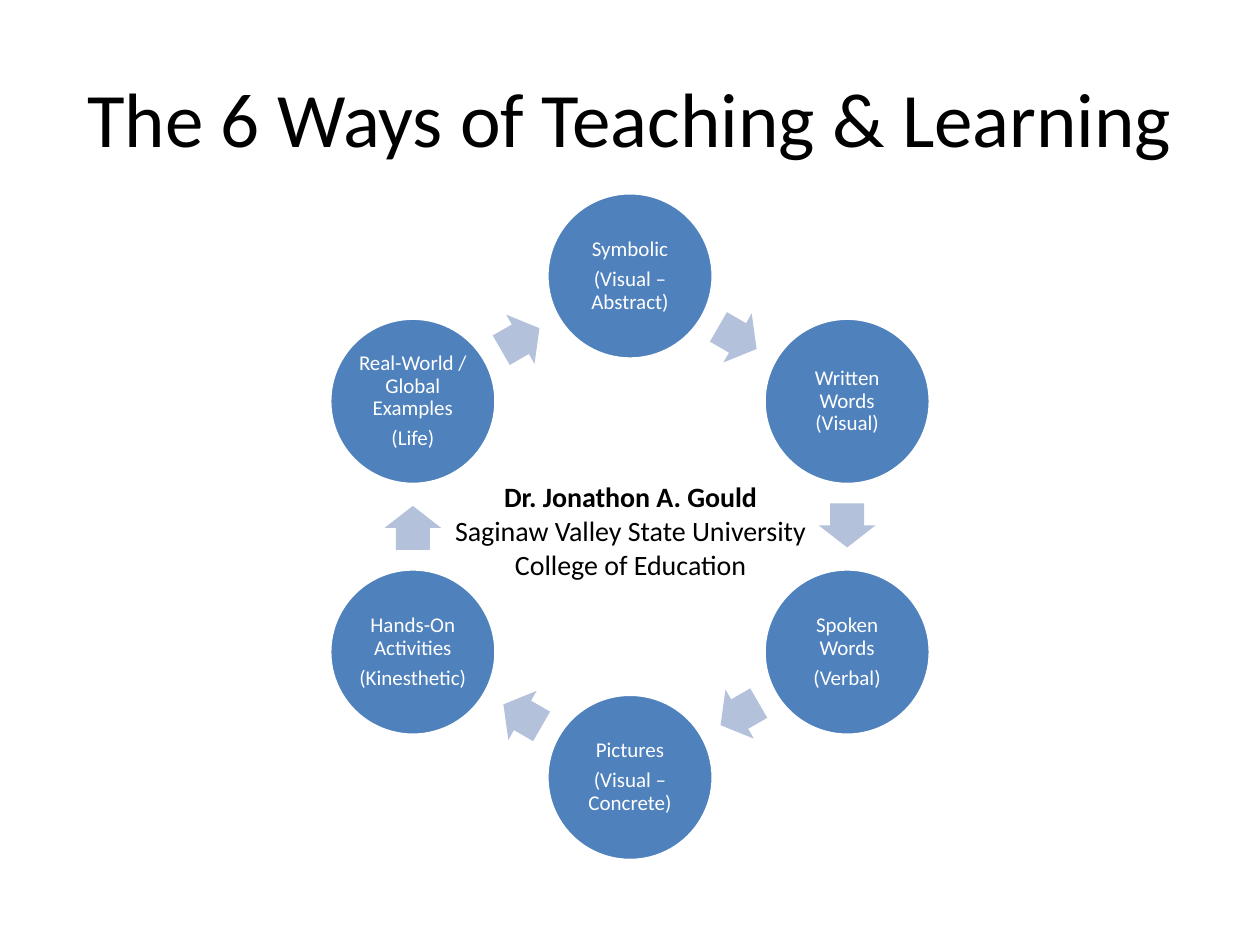
from dataclasses import dataclass
from math import cos, radians, sin

from pptx import Presentation
from pptx.dml.color import RGBColor
from pptx.enum.shapes import MSO_SHAPE
from pptx.enum.text import MSO_ANCHOR, PP_ALIGN
from pptx.util import Inches, Pt

ELLIPSE = MSO_SHAPE.OVAL
ARROW = MSO_SHAPE.RIGHT_ARROW
CENTER = PP_ALIGN.CENTER
MIDDLE = MSO_ANCHOR.MIDDLE
TITLE_ONLY = 5


@dataclass(frozen=True)
class Theme:
    font: str = "Calibri"
    ink: RGBColor = RGBColor(0, 0, 0)
    paper: RGBColor = RGBColor(255, 255, 255)
    way: RGBColor = RGBColor(0x4F, 0x81, 0xBD)
    arrow: RGBColor = RGBColor(0xB3, 0xC1, 0xDB)
    title_size: int = 44
    author_size: int = 16
    way_size: int = 12


THEME = Theme()

WAYS = [
    ["Symbolic", "(Visual – Abstract)"],
    ["Written Words (Visual)"],
    ["Spoken Words", "(Verbal)"],
    ["Pictures", "(Visual – Concrete)"],
    ["Hands-On Activities", "(Kinesthetic)"],
    ["Real-World / Global Examples", "(Life)"],
]
AUTHOR = [
    "Dr. Jonathon A. Gould",
    "Saginaw Valley State University",
    "College of Education",
]


def write(frame, lines, size, color):
    frame.word_wrap = True
    frame.text = "\n".join(lines)
    for paragraph in frame.paragraphs:
        paragraph.alignment = CENTER
        for run in paragraph.runs:
            run.font.name = THEME.font
            run.font.size = Pt(size)
            run.font.color.rgb = color


def add_title(slide, left, top, width, height):
    title = slide.shapes.title
    title.left, title.top = Inches(left), Inches(top)
    title.width, title.height = Inches(width), Inches(height)
    write(title.text_frame, ["The 6 Ways of Teaching & Learning"],
          THEME.title_size, THEME.ink)
    title.text_frame.vertical_anchor = MIDDLE


def add_centered(slide, kind, x, y, width, height, color):
    shape = slide.shapes.add_shape(
        kind, Inches(x - width / 2), Inches(y - height / 2),
        Inches(width), Inches(height))
    shape.shadow.inherit = False
    shape.fill.solid()
    shape.fill.fore_color.rgb = color
    return shape


def add_way(slide, x, y, diameter, lines):
    way = add_centered(slide, ELLIPSE, x, y, diameter, diameter, THEME.way)
    way.line.color.rgb = THEME.paper
    way.line.width = Pt(2)
    frame = way.text_frame
    write(frame, lines, THEME.way_size, THEME.paper)
    frame.vertical_anchor = MIDDLE
    frame.margin_left = frame.margin_right = Inches(0.02)
    frame.margin_top = frame.margin_bottom = Inches(0.02)
    for paragraph in frame.paragraphs:
        paragraph.line_spacing = 0.9
        paragraph.space_after = Pt(0.35 * THEME.way_size)


def add_arrow(slide, x, y, heading):
    arrow = add_centered(slide, ARROW, x, y, 0.35, 0.45, THEME.arrow)
    arrow.line.fill.background()
    arrow.adjustments[0] = 0.6
    arrow.adjustments[1] = 0.5
    arrow.rotation = heading


def add_cycle(slide, left, top, width, height):
    diameter = 1.32
    radius = (height - diameter) / 2
    center_x, center_y = left + width / 2, top + height / 2
    step = 360 / len(WAYS)
    arrow_radius = radius * cos(radians(step / 2))
    setback = 0.01
    for index, lines in enumerate(WAYS):
        angle = radians(index * step - 90)
        add_way(slide, center_x + radius * cos(angle),
                center_y + radius * sin(angle), diameter, lines)
        heading = (index + 0.5) * step
        turn = radians(heading)
        add_arrow(slide,
                  center_x + arrow_radius * sin(turn) - setback * cos(turn),
                  center_y - arrow_radius * cos(turn) - setback * sin(turn),
                  heading)


def add_author(slide, left, top, width, height):
    author = slide.shapes.add_textbox(
        Inches(left), Inches(top), Inches(width), Inches(height))
    write(author.text_frame, AUTHOR, THEME.author_size, THEME.ink)
    author.text_frame.paragraphs[0].runs[0].font.bold = True


def main():
    deck = Presentation()
    deck.slide_width, deck.slide_height = Inches(10), Inches(7.5)
    slide = deck.slides.add_slide(deck.slide_layouts[TITLE_ONLY])
    add_title(slide, 0.5, 0.3, 9, 1.25)
    add_cycle(slide, 2.61, 1.53, 4.78, 5.3)
    add_author(slide, 3.42, 3.76, 3.17, 0.91)
    deck.save("out.pptx")


if __name__ == "__main__":
    main()
